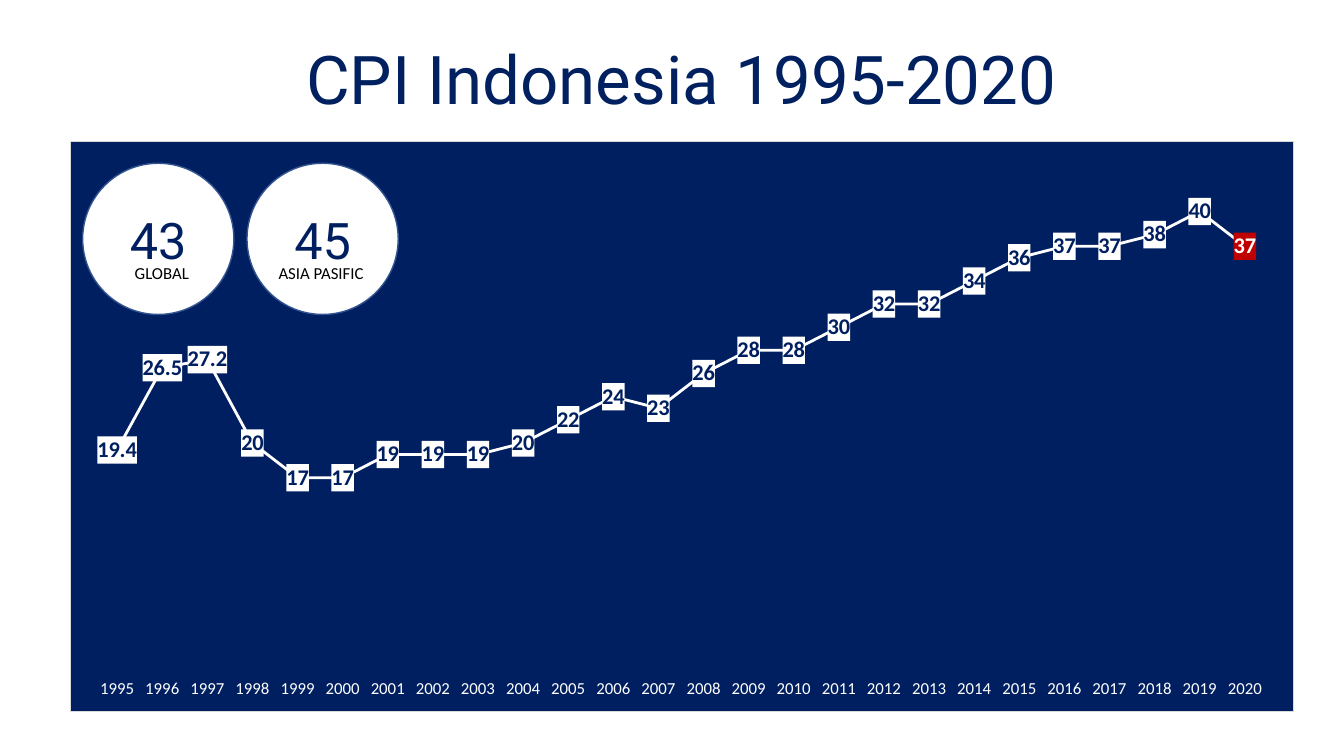
from lxml import etree
from pptx import Presentation
from pptx.chart.data import CategoryChartData
from pptx.dml.color import RGBColor
from pptx.enum.chart import XL_CHART_TYPE, XL_LABEL_POSITION, XL_MARKER_STYLE, XL_TICK_MARK
from pptx.enum.shapes import MSO_SHAPE
from pptx.enum.text import MSO_ANCHOR, PP_ALIGN
from pptx.oxml import parse_xml
from pptx.oxml.ns import nsdecls, qn
from pptx.util import Inches, Pt

LINE, CENTER_LABEL = XL_CHART_TYPE.LINE, XL_LABEL_POSITION.CENTER
NO_MARKER, NO_TICK = XL_MARKER_STYLE.NONE, XL_TICK_MARK.NONE
MIDDLE, CENTER = MSO_ANCHOR.MIDDLE, PP_ALIGN.CENTER

# Content
TITLE = "CPI Indonesia 1995-2020"
FIRST_YEAR = 1995
SCORES = [19.4, 26.5, 27.2, 20, 17, 17, 19, 19, 19, 20, 22, 24, 23,
          26, 28, 28, 30, 32, 32, 34, 36, 37, 37, 38, 40, 37]
# score, region, circle left, caption left
AVERAGES = [("45", "ASIA PASIFIC", 2.45, 2.61), ("43", "GLOBAL", 0.82, 1.03)]

COLORS = {"title": "002060", "navy": "001F60", "white": "FFFFFF", "black": "000000",
          "border": "D9D9D9", "ring": "325491", "latest": "C00000"}
# Plot area as shares of the chart: left, top, width, height
PLOT = {"x": 0.02, "y": 0.021, "w": 0.959, "h": 0.915}


def color(name):
    return RGBColor.from_string(COLORS[name])


def style_font(font, size, ink, name="Calibri", bold=False):
    font.size, font.name, font.bold = Pt(size), name, bold
    font.color.rgb = color(ink)


def write(shape, text, size=12, ink="black", font="Calibri", anchor=MIDDLE, spacing=1.0):
    frame = shape.text_frame
    frame.word_wrap = True
    frame.vertical_anchor = anchor
    para = frame.paragraphs[0]
    para.alignment = CENTER
    para.line_spacing = spacing
    span = para.add_run()
    span.text = text
    style_font(span.font, size, ink, font)


def add_text(page, left, top, width, height, text, **text_format):
    box = page.shapes.add_textbox(Inches(left), Inches(top), Inches(width), Inches(height))
    write(box, text, **text_format)


def add_background(element, fill, border=None):
    """Fill a chart part; its text properties must already exist."""
    outline = (f'<a:ln w="9525"><a:solidFill><a:srgbClr val="{COLORS[border]}"/></a:solidFill></a:ln>'
               if border else '<a:ln><a:noFill/></a:ln>')
    element.find(qn("c:txPr")).addprevious(parse_xml(
        f'<c:spPr {nsdecls("c", "a")}><a:solidFill><a:srgbClr val="{COLORS[fill]}"/>'
        f'</a:solidFill>{outline}</c:spPr>'))


def set_plot_layout(plot_area):
    for old in plot_area.findall(qn("c:layout")):
        plot_area.remove(old)
    layout = etree.Element(qn("c:layout"))
    manual = etree.SubElement(layout, qn("c:manualLayout"))
    settings = {"layoutTarget": "inner", "xMode": "edge", "yMode": "edge", **PLOT}
    for tag, value in settings.items():
        etree.SubElement(manual, qn(f"c:{tag}")).set("val", str(value))
    plot_area.insert(0, layout)


def add_score_chart(page):
    data = CategoryChartData()
    data.categories = [str(FIRST_YEAR + i) for i in range(len(SCORES))]
    data.add_series("Series 1", SCORES)
    chart = page.shapes.add_chart(LINE, Inches(0.69), Inches(1.4),
                                  Inches(12.14), Inches(5.66), data).chart
    chart.has_legend = chart.has_title = False
    style_font(chart.font, 10, "black")
    add_background(chart._chartSpace, "navy", "border")
    set_plot_layout(chart._chartSpace.chart.plotArea)

    # Axes
    years, values = chart.category_axis, chart.value_axis
    years.major_tick_mark = years.minor_tick_mark = NO_TICK
    years.format.line.fill.background()
    style_font(years.tick_labels.font, 12, "white")
    values.minimum_scale, values.maximum_scale = 0, 45
    values.has_major_gridlines = values.visible = False

    # Line and labels
    chart.plots[0].vary_by_categories = False
    series = chart.plots[0].series[0]
    series.smooth = False
    series.marker.style = NO_MARKER
    series.format.line.width = Pt(2)
    series.format.line.color.rgb = color("white")
    labels = series.data_labels
    labels.show_value = True
    latest = series.points[len(SCORES) - 1].data_label
    for label, ink in ((labels, "navy"), (latest, "white")):
        label.position = CENTER_LABEL
        style_font(label.font, 16, ink, bold=True)
    group = series._element.find(qn("c:dLbls"))
    add_background(group, "white")
    add_background(group.find(qn("c:dLbl")), "latest")


def add_average(page, score, region, circle_left, caption_left):
    circle = page.shapes.add_shape(MSO_SHAPE.OVAL, Inches(circle_left), Inches(1.62),
                                   Inches(1.5), Inches(1.5))
    circle.shadow.inherit = False
    circle.fill.solid()
    circle.fill.fore_color.rgb = color("white")
    circle.line.color.rgb = color("ring")
    circle.line.width = Pt(1)
    write(circle, score, size=36, ink="navy", font="Roboto")
    add_text(page, caption_left, 2.51, 1.15, 0.41, region, spacing=0.9)


def main():
    deck = Presentation()
    deck.slide_width, deck.slide_height = Inches(13.33), Inches(7.5)
    page = deck.slides.add_slide(deck.slide_layouts[6])
    add_text(page, 0.69, 0.32, 12.14, 0.91, TITLE, size=48, ink="title",
             font="Roboto", anchor=MSO_ANCHOR.TOP)
    add_score_chart(page)
    for average in AVERAGES:
        add_average(page, *average)
    deck.save("out.pptx")


if __name__ == "__main__":
    main()
